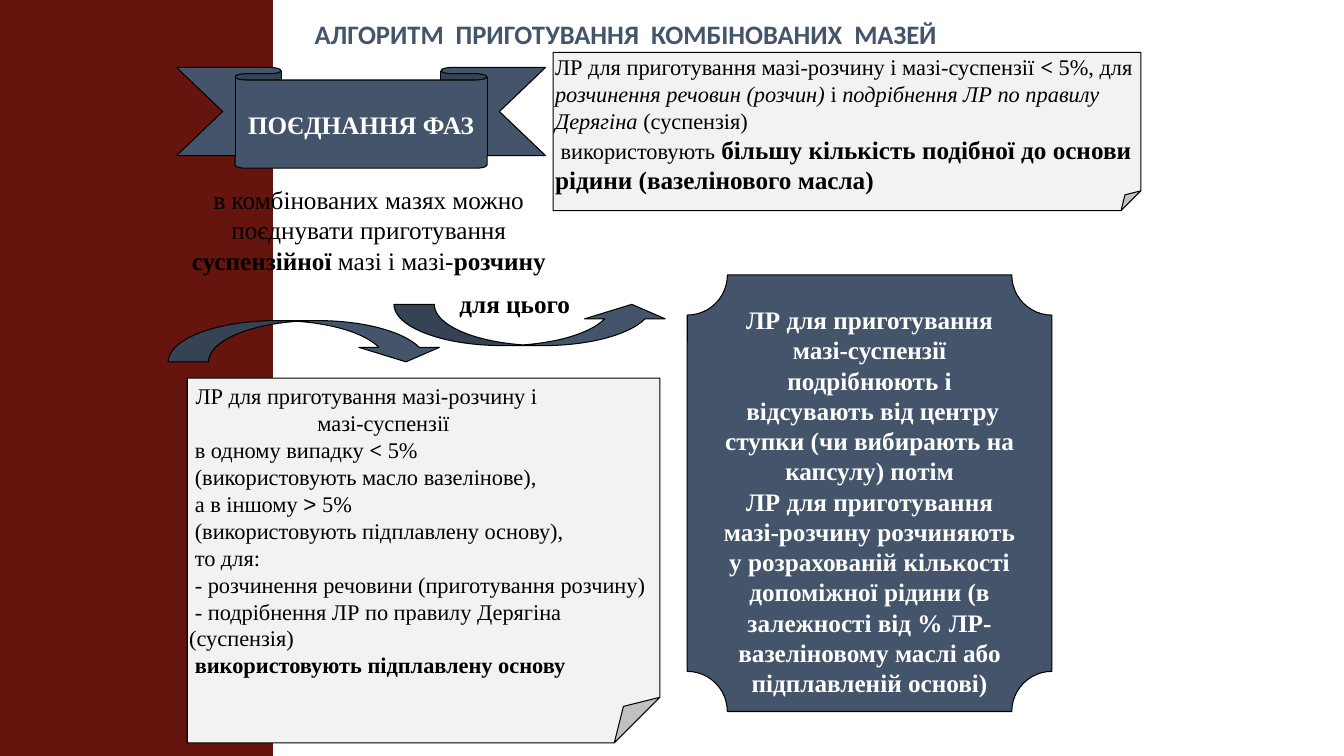
import lxml.etree
import pptx
import pptx.util
import pptx.dml.color
import pptx.enum.shapes
import pptx.enum.text
import pptx.oxml.ns

Cm = pptx.util.Cm
Pt = pptx.util.Pt
SHAPES = pptx.enum.shapes.MSO_SHAPE
ALIGN = pptx.enum.text.PP_ALIGN
ANCHOR = pptx.enum.text.MSO_ANCHOR

COLOURS = {"band": "65140E", "slate": "44546A", "paper": "F2F2F2",
           "ink": "000000", "white": "FFFFFF"}
SERIF = "Times New Roman"
SHAPE_INSETS = (0.05, 0.03)
TEXT_INSETS = (0.25, 0.13)


def colour(name):
    return pptx.dml.color.RGBColor.from_string(COLOURS[name])


def lengths(box):
    return [Cm(value) for value in box]


def write(para, spans, ink="ink", size=18, font=SERIF, align=ALIGN.LEFT):
    """Add spans (text, style); a newline in the text is a line break."""
    para.alignment = align
    para.line_spacing = 1.0
    for text, style in spans:
        for number, line in enumerate(text.split("\n")):
            if number:
                para.add_line_break()
            if line:
                span = para.add_run()
                span.text = line
                span.font.name = style.get("font", font)
                span.font.size = Pt(style.get("size", size))
                span.font.bold = style.get("bold", False)
                span.font.italic = style.get("italic", False)
                span.font.color.rgb = colour(ink)


def prepare(frame, insets, anchor=ANCHOR.TOP, wrap=True):
    frame.word_wrap = wrap
    frame.vertical_anchor = anchor
    frame.margin_left = frame.margin_right = Cm(insets[0])
    frame.margin_top = frame.margin_bottom = Cm(insets[1])
    return frame


def adjust(figure, values):
    """Set the shape's adjustments, also where python-pptx lists none."""
    qn = pptx.oxml.ns.qn
    geometry = figure._element.spPr.find(qn("a:prstGeom"))
    for old in geometry.findall(qn("a:avLst")):
        geometry.remove(old)
    guides = lxml.etree.SubElement(geometry, qn("a:avLst"))
    for number, value in enumerate(values, 1):
        name = f"adj{number}" if len(values) > 1 else "adj"
        lxml.etree.SubElement(guides, qn("a:gd"), name=name,
                              fmla=f"val {round(value * 100000)}")


def add_figure(page, kind, box, fill, adjustments=(), outlined=True):
    figure = page.shapes.add_shape(kind, *lengths(box))
    figure.shadow.inherit = False
    figure.fill.solid()
    figure.fill.fore_color.rgb = colour(fill)
    if outlined:
        figure.line.color.rgb = colour("ink")
        figure.line.width = Pt(0.75)
    else:
        figure.line.fill.background()
    adjust(figure, adjustments)
    return figure


def add_label(page, box, spans, align=ALIGN.LEFT, wrap=True):
    label = page.shapes.add_textbox(*lengths(box))
    frame = prepare(label.text_frame, TEXT_INSETS, wrap=wrap)
    write(frame.paragraphs[0], spans, align=align)


def place_title(page, box):
    title = page.shapes.title
    title.left, title.top, title.width, title.height = lengths(box)
    frame = prepare(title.text_frame, TEXT_INSETS, ANCHOR.MIDDLE)
    frame.auto_size = pptx.enum.text.MSO_AUTO_SIZE.NONE
    write(frame.paragraphs[0],
          [("АЛГОРИТМ  ПРИГОТУВАННЯ  КОМБІНОВАНИХ  МАЗЕЙ", {"bold": True})],
          "slate", 19, "Calibri", ALIGN.CENTER)


def add_phases(page, box):
    """Ribbon heading with the introduction below it."""
    left, top, width, height = box
    ribbon = add_figure(page, SHAPES.DOWN_RIBBON, (left + 0.21, top, 9.3, 2.54),
                        "slate", (0.125, 0.683))
    frame = prepare(ribbon.text_frame, SHAPE_INSETS, ANCHOR.MIDDLE)
    write(frame.paragraphs[0], [("ПОЄДНАННЯ ФАЗ", {"bold": True})],
          "white", align=ALIGN.CENTER)
    add_label(page, (left, top + 2.82, width, height - 2.82), [
        ("в комбінованих мазях можно поєднувати приготування ", {}),
        ("суспензійної", {"bold": True}),
        (" мазі і мазі-", {}),
        ("розчину", {"bold": True}),
    ], ALIGN.CENTER)


def add_transition(page, box):
    """Two curved arrows and the words between them."""
    left, top, width, height = box
    arrow_width, arrow_height = 7.01, 1.04
    places = [(left + width - arrow_width, top + 0.53, False),
              (left, top + height - arrow_height, True)]
    for x, y, flipped in places:
        arrow = add_figure(page, SHAPES.CURVED_UP_ARROW,
                           (x, y, arrow_width, arrow_height),
                           "slate", (0.977, 1.954, 0.351))
        if flipped:
            arrow._element.spPr.xfrm.set("flipV", "1")
    add_label(page, (left + 7.09, top, 3.33, 1.04),
              [("для цього", {"bold": True})], wrap=False)


def add_note(page, box, paragraphs):
    """Folded sheet; each paragraph is (left indent, spans)."""
    sheet = add_figure(page, SHAPES.FOLDED_CORNER, box, "paper", (0.125,))
    frame = prepare(sheet.text_frame, SHAPE_INSETS)
    for number, (indent, spans) in enumerate(paragraphs):
        para = frame.add_paragraph() if number else frame.paragraphs[0]
        write(para, spans, size=16)
        if indent:
            para._p.get_or_add_pPr().set("marL", str(Cm(indent)))


def add_plaque(page, box, text):
    plaque = add_figure(page, SHAPES.PLAQUE, box, "slate", (0.11,))
    frame = prepare(plaque.text_frame, SHAPE_INSETS)
    write(frame.paragraphs[0], [(text, {"bold": True})], "white",
          align=ALIGN.CENTER)


SMALL_DOSE_NOTE = [(0, [
    ("ЛР для приготування мазі-розчину і мазі-суспензії ", {}),
    ("< ", {"bold": True}),
    ("5%, для ", {}),
    ("розчинення речовин (розчин) ", {"italic": True}),
    ("і ", {}),
    ("подрібнення ЛР по правилу Дерягіна ", {"italic": True}),
    ("(суспензія) \n використовують", {}),
    (" ", {"size": 18}),
    ("більшу кількість подібної до основи рідини (вазелінового масла)",
     {"size": 18, "bold": True}),
])]

MIXED_DOSE_NOTE = [
    (0, [(" ", {"size": 18}), ("ЛР для приготування мазі-розчину і", {})]),
    (3.23, [("мазі-суспензії", {})]),
    (0, [
        (" в одному випадку ", {}),
        ("< ", {"bold": True}),
        ("5%\n (використовують масло вазелінове),\n а в іншому ", {}),
        (">", {"font": "Arial"}),
        (" 5%\n (використовують підплавлену основу),\n то для:", {}),
    ]),
    (0, [(" - розчинення речовини (приготування розчину)", {})]),
    (0, [
        (" - подрібнення ЛР по правилу Дерягіна (суспензія) \n ", {}),
        ("використовують підплавлену основу", {"bold": True}),
    ]),
]

PROCEDURE = (
    "ЛР для приготування\nмазі-суспензії подрібнюють і\n"
    " відсувають від центру ступки (чи вибирають на капсулу) потім\n"
    "ЛР для приготування мазі-розчину розчиняють у розрахованій кількості "
    "допоміжної рідини (в залежності від % ЛР-вазеліновому маслі або "
    "підплавленій основі)")


def main():
    deck = pptx.Presentation()
    deck.slide_width, deck.slide_height = Cm(33.87), Cm(19.05)
    page = deck.slides.add_slide(deck.slide_layouts.get_by_name("Title Only"))
    add_figure(page, SHAPES.RECTANGLE, (0, 0, 6.88, 19.05), "band",
               outlined=False)
    place_title(page, (4.52, 0.33, 22.5, 1.07))
    add_phases(page, (4.24, 1.7, 10.11, 5.39))
    add_note(page, (13.94, 1.32, 14.81, 3.99), SMALL_DOSE_NOTE)
    add_note(page, (4.72, 9.53, 11.91, 9.19), MIXED_DOSE_NOTE)
    add_plaque(page, (17.32, 6.93, 9.19, 11), PROCEDURE)
    add_transition(page, (4.24, 7.14, 12.7, 1.98))
    deck.save("out.pptx")


if __name__ == "__main__":
    main()
